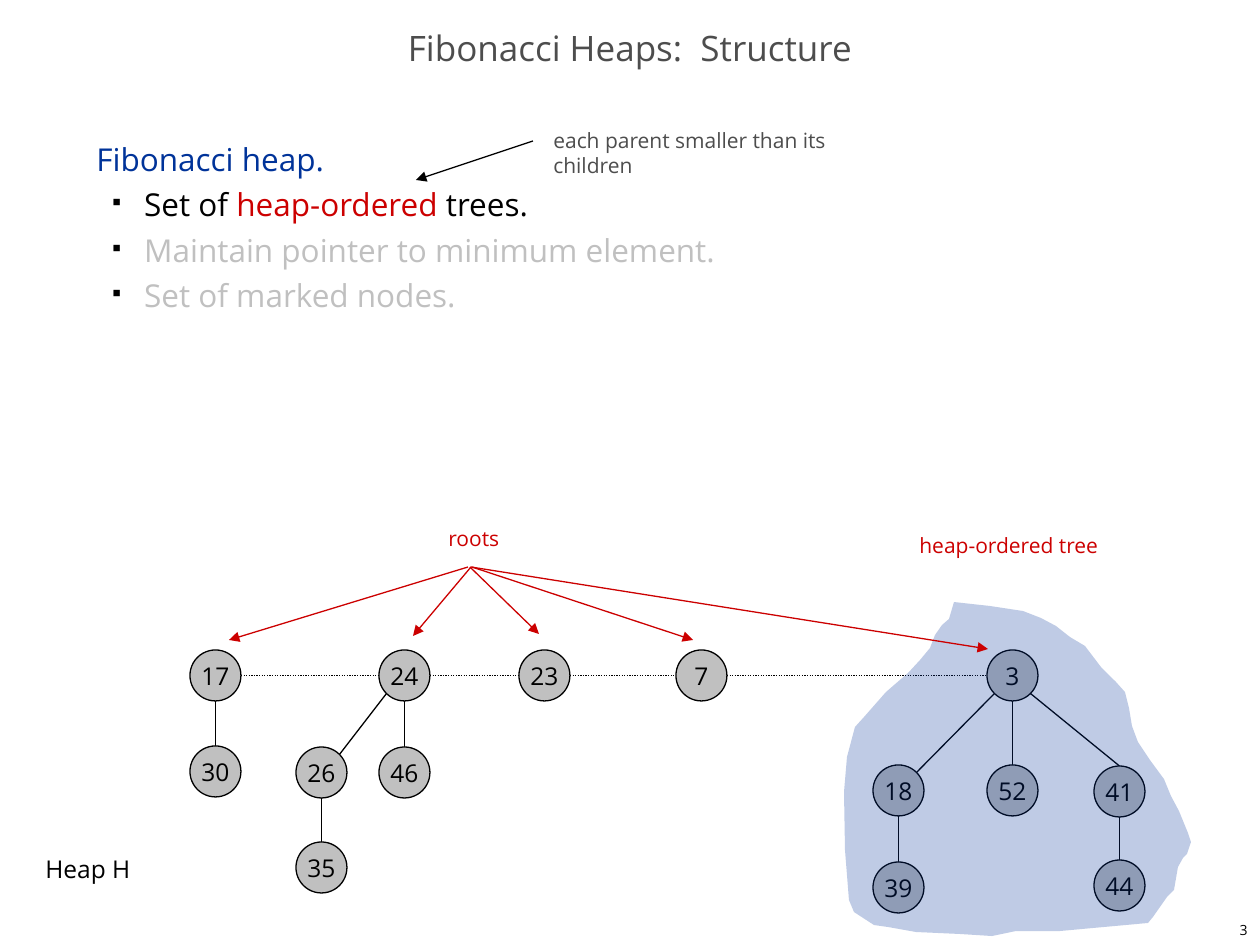
from lxml.etree import SubElement as Sub
from pptx import Presentation
from pptx.dml.color import RGBColor as RGB
from pptx.enum.dml import MSO_LINE
from pptx.enum.shapes import MSO_CONNECTOR as CON, MSO_SHAPE as SHAPE
from pptx.enum.text import MSO_ANCHOR as ANCHOR, MSO_AUTO_SIZE as AUTO, PP_ALIGN as ALIGN
from pptx.oxml.ns import qn
from pptx.util import Emu, Inches, Pt

SCALE = 914400 / 126
BLACK, GRAY, PALE, RED, BLUE = "000000", "4D4D4D", "C0C0C0", "CC0000", "003399"


def write(shape, text, size, color, align=ALIGN.LEFT, wrap=False, anchor=ANCHOR.TOP):
    frame = shape.text_frame
    frame.auto_size = AUTO.NONE
    frame.word_wrap = wrap
    frame.vertical_anchor = anchor
    para = frame.paragraphs[0]
    para.text = text
    para.alignment = align
    para.font.size = Pt(size)
    para.font.name = "Open Sans"
    para.font.color.rgb = RGB.from_string(color)
    return para


def link(x1, y1, x2, y2, color=BLACK, dash=False, arrow=False):
    ends = [Emu(round(v * SCALE)) for v in (x1, y1, x2, y2)]
    line = shapes.add_connector(CON.STRAIGHT, *ends)
    line.line.color.rgb = RGB.from_string(color)
    line.line.width = Pt(0.75)
    if dash:
        line.line.dash_style = MSO_LINE.ROUND_DOT
    if arrow:
        Sub(line.line._get_or_add_ln(), qn("a:tailEnd"), type="triangle")
    Sub(line._element.spPr, qn("a:effectLst"))


prs = Presentation()
prs.slide_width, prs.slide_height = Inches(10), Inches(7.5)
slide = prs.slides.add_slide(prs.slide_layouts[5])
shapes = slide.shapes

title = shapes.title
title.left, title.top, title.width, title.height = [
    Emu(round(v * SCALE)) for v in (0, 21, 1260, 63)]
para = write(title, "Fibonacci Heaps:  Structure", 20, GRAY, ALIGN.CENTER, True, ANCHOR.MIDDLE)
para.line_spacing = 0.7

body = shapes.add_textbox(*[Emu(round(v * SCALE)) for v in (84, 126, 1081, 746)])
para = write(body, "Fibonacci heap.", 18, BLUE, wrap=True)
para.line_spacing = Pt(26)
points = [
    [("Set of ", BLACK), ("heap-ordered", RED), (" trees.", BLACK)],
    [("Maintain pointer to minimum element.", PALE)],
    [("Set of marked nodes.", PALE)],
]
for point in points:
    para = body.text_frame.add_paragraph()
    para.level = 1
    para.line_spacing = Pt(26)
    para.font.size = Pt(18)
    para.font.name = "Open Sans"
    for text, color in point:
        run = para.add_run()
        run.text = text
        run.font.color.rgb = RGB.from_string(color)
    props = para._p.get_or_add_pPr()
    props.set("marL", str(Inches(0.38)))
    props.set("indent", str(Inches(-0.25)))
    fill = props.makeelement(qn("a:buClr"), {})
    Sub(fill, qn("a:srgbClr"), val=BLACK)
    size = props.makeelement(qn("a:buSzPct"), {"val": "35000"})
    mark = props.makeelement(qn("a:buChar"), {"char": "■"})
    spot = props.index(props.find(qn("a:defRPr")))
    for item in (mark, size, fill):
        props.insert(spot, item)

labels = [
    ("3", 998, 914, 262, 31, 8, BLACK, ALIGN.RIGHT, True, ANCHOR.MIDDLE),
    ("Heap H", 33, 848, 112, 42, 14, BLACK, ALIGN.LEFT, False, ANCHOR.TOP),
    ("roots", 436, 519, 77, 38, 12, RED, ALIGN.LEFT, False, ANCHOR.TOP),
    ("heap-ordered tree", 907, 526, 208, 38, 12, RED, ALIGN.LEFT, False, ANCHOR.TOP),
    ("each parent smaller than its children", 541, 121, 365, 38, 12, GRAY,
     ALIGN.LEFT, True, ANCHOR.TOP),
]
for text, x, y, w, h, *style in labels:
    box = shapes.add_textbox(*[Emu(round(v * SCALE)) for v in (x, y, w, h)])
    write(box, text, *style)

SIZE, HALF, DIAG = 51, 25.5, 18
nodes = {
    17: (190, 650), 24: (379, 650), 23: (519, 650), 7: (676, 650), 3: (987, 650),
    30: (190, 746), 26: (296, 747), 46: (379, 747), 35: (296, 842),
    18: (873, 765), 52: (987, 765), 41: (1094, 766), 39: (873, 862), 44: (1094, 860),
}
mids = {key: (x + HALF, y + HALF) for key, (x, y) in nodes.items()}

roots = [17, 24, 23, 7, 3]
for left, right in zip(roots, roots[1:]):
    link(mids[left][0] + HALF, mids[left][1], mids[right][0] - HALF, mids[right][1], dash=True)

edges = [
    (17, 30, 0, 0), (24, 26, -1, 1), (24, 46, 0, 0), (26, 35, 0, 0),
    (3, 18, -1, 1), (3, 52, 0, 0), (3, 41, 1, 0), (18, 39, 0, 0), (41, 44, 0, 0),
]
for top, low, out, into in edges:
    (x1, y1), (x2, y2) = mids[top], mids[low]
    link(x1 + out * DIAG, y1 + (DIAG if out else HALF),
         x2 + into * DIAG, y2 - (DIAG if into else HALF))

for key, (x, y) in nodes.items():
    node = shapes.add_shape(SHAPE.OVAL, *[Emu(round(v * SCALE)) for v in (x, y, SIZE, SIZE)])
    node.shadow.inherit = False
    node.fill.solid()
    node.fill.fore_color.rgb = RGB.from_string(PALE)
    node.line.color.rgb = RGB.from_string(BLACK)
    node.line.width = Pt(0.75)
    write(node, str(key), 14, BLACK, ALIGN.CENTER, anchor=ANCHOR.MIDDLE)

rim = [
    (954, 602), (990, 606), (1023, 611), (1041, 618), (1056, 626), (1070, 637), (1085, 646),
    (1101, 667), (1116, 682), (1125, 692), (1129, 708), (1132, 726), (1138, 742),
    (1150, 760), (1164, 779), (1171, 796), (1179, 811), (1188, 833), (1191, 842),
    (1187, 854), (1183, 858), (1178, 867), (1174, 890), (1167, 897), (1153, 917),
    (1148, 923), (1104, 927), (1060, 931), (1016, 931), (992, 936), (960, 934),
    (916, 932), (888, 927), (874, 925), (854, 912), (849, 900), (845, 850), (844, 792),
    (847, 757), (855, 727), (864, 717), (886, 692), (901, 679), (908, 673), (920, 660),
    (930, 648), (935, 635), (942, 625), (949, 619),
]
pen = shapes.build_freeform(*rim[0], scale=SCALE)
pen.add_line_segments(rim[1:], close=True)
blob = pen.convert_to_shape()
blob.shadow.inherit = False
blob.fill.solid()
blob.fill.fore_color.rgb = RGB.from_string(BLUE)
blob.line.fill.background()
tint = blob._element.spPr.find(qn("a:solidFill"))[0]
Sub(tint, qn("a:alpha"), val="25000")

for x1, x2, y2 in [(468, 229, 640), (471, 413, 636), (470, 539, 634),
                   (472, 693, 640), (471, 988, 649)]:
    link(x1, 567, x2, y2, RED, arrow=True)
link(533, 141, 416, 180, arrow=True)

prs.save("out.pptx")
